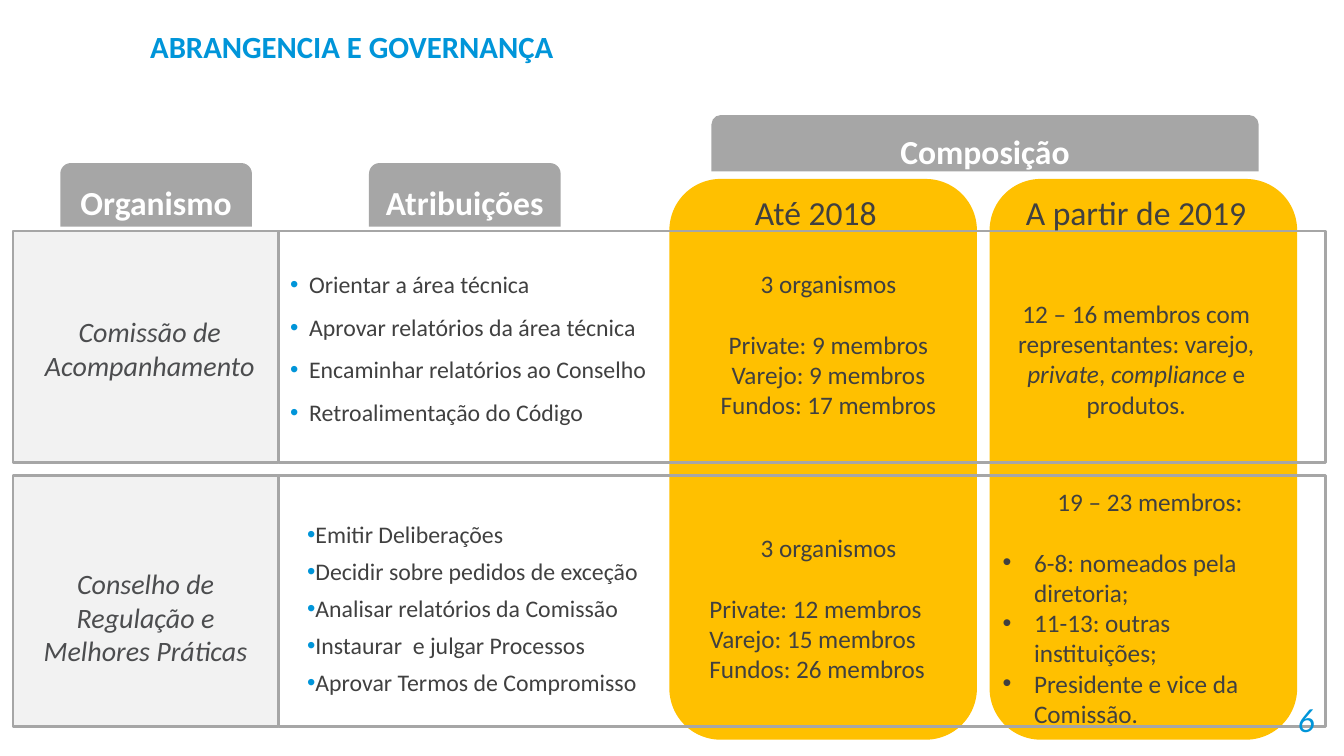
from lxml import etree
from pptx import Presentation
from pptx.dml.color import RGBColor
from pptx.enum.shapes import MSO_SHAPE
from pptx.enum.text import MSO_ANCHOR, PP_ALIGN
from pptx.oxml.ns import qn
from pptx.util import Cm, Pt

LEFT, CENTER, RIGHT = PP_ALIGN.LEFT, PP_ALIGN.CENTER, PP_ALIGN.RIGHT
TOP, MIDDLE = MSO_ANCHOR.TOP, MSO_ANCHOR.MIDDLE
RECTANGLE, ROUNDED = MSO_SHAPE.RECTANGLE, MSO_SHAPE.ROUNDED_RECTANGLE
TAB = MSO_SHAPE.ROUND_2_SAME_RECTANGLE

FONT = "Calibri"
BLUE, GRAY, PALE, YELLOW = "0095D9", "A6A6A6", "F2F2F2", "FFC000"
DARK, SLATE, WHITE = "404040", "4C4D4F", "FFFFFF"

TITLE = "ABRANGENCIA E GOVERNANÇA"
PAGE_NUMBER = "6"
TABS = [
    ("Organismo", (1.52, 4.11, 4.83, 1.6)),
    ("Atribuições", (9.3, 4.11, 4.83, 1.6)),
    ("Composição", (17.93, 2.9, 13.79, 1.42)),
]
PERIODS = ["Até 2018", "A partir de 2019"]
PERIOD_LEFT, PERIOD_STEP, PERIOD_WIDTH = 16.87, 8.07, 7.75
ROWS = [(5.82, 5.84), (11.99, 6.32)]
ROW_LEFT, NAME_WIDTH, DETAIL_WIDTH = 0.33, 6.68, 26.39

BULLET_HANGING = dict(size=17, after=10, bullet=BLUE, margin=0.48, indent=-0.48)
BULLET_INDENTED = dict(size=17, after=6, bullet=BLUE, margin=0.48, indent=0.48)
BULLET_DARK = dict(bullet=DARK, margin=0.79, indent=-0.79)
NAME = dict(size=20, color=SLATE, italic=True, align=CENTER)
LEAD = dict(align=CENTER, after=22)
CENTERED = dict(align=CENTER)

TEXTS = [
    ((0.74, 7.8, 6.07, 1.96), [(["Comissão de Acompanhamento"], NAME)]),
    ((0.33, 14.15, 6.68, 2.82),
     [(["Conselho de Regulação e Melhores Práticas"], NAME)]),
    ((7.06, 6.68, 9.91, 4.24), [([
        "Orientar a área técnica",
        "Aprovar relatórios da área técnica",
        "Encaminhar relatórios ao Conselho",
        "Retroalimentação do Código",
    ], BULLET_HANGING)]),
    ((6.53, 12.98, 13.03, 4.75), [([
        "Emitir Deliberações",
        "Decidir sobre pedidos de exceção",
        "Analisar relatórios da Comissão",
        "Instaurar  e julgar Processos",
        "Aprovar Termos de Compromisso",
    ], BULLET_INDENTED)]),
    ((17.63, 6.63, 6.5, 4.11), [
        (["3 organismos"], LEAD),
        (["Private: 9 membros", "Varejo: 9 membros", "Fundos: 17 membros"], CENTERED),
    ]),
    ((17.63, 13.28, 6.5, 4.11), [
        (["3 organismos"], LEAD),
        (["Private: 12 membros", "Varejo: 15 membros", "Fundos: 26 membros"], {}),
    ]),
    ((24.94, 7.39, 7.39, 3.35), [([
        "12 – 16 membros com representantes: varejo, *private*, *compliance* e produtos.",
    ], CENTERED)]),
    ((25.02, 12.12, 7.92, 6.4), [
        (["19 – 23 membros:"], LEAD),
        (["6-8: nomeados pela diretoria;", "11-13: outras instituições;",
          "Presidente e vice da Comissão."], BULLET_DARK),
    ]),
]


def rgb(value):
    return RGBColor.from_string(value)


def add_bullet(para, color, margin, indent):
    properties = para._p.get_or_add_pPr()
    properties.set("marL", str(Cm(margin)))
    properties.set("indent", str(Cm(indent)))
    tint = etree.SubElement(properties, qn("a:buClr"))
    etree.SubElement(tint, qn("a:srgbClr"), val=color)
    etree.SubElement(properties, qn("a:buFont"), typeface="Arial")
    etree.SubElement(properties, qn("a:buChar"), char="•")


def write(box, lines, size=18, color=DARK, bold=False, italic=False, align=LEFT,
          after=0, anchor=TOP, bullet=None, margin=0, indent=0):
    frame = box.text_frame
    frame.word_wrap = True
    frame.vertical_anchor = anchor
    for line in lines:
        para = frame.paragraphs[-1]
        if para.runs:
            para = frame.add_paragraph()
        if bullet:
            add_bullet(para, bullet, margin, indent)
        para.alignment = align
        para.space_before = Pt(0)
        para.space_after = Pt(after)
        for position, words in enumerate(line.split("*")):
            span = para.add_run()
            span.text = words
            font = span.font
            font.name, font.size, font.bold = FONT, Pt(size), bold
            font.italic = italic or position % 2 == 1
            font.color.rgb = rgb(color)


def add_box(page, area):
    return page.shapes.add_textbox(*map(Cm, area))


def add_panel(page, kind, area, fill=None, line=None):
    panel = page.shapes.add_shape(kind, *map(Cm, area))
    panel.shadow.inherit = False
    if fill:
        panel.fill.solid()
        panel.fill.fore_color.rgb = rgb(fill)
    else:
        panel.fill.background()
    if line:
        panel.line.color.rgb = rgb(line)
        panel.line.width = Pt(2)
    else:
        panel.line.fill.background()
    return panel


def main():
    deck = Presentation()
    deck.slide_width, deck.slide_height = Cm(33.87), Cm(19.05)
    page = deck.slides.add_slide(deck.slide_layouts[5])

    title = page.shapes.title
    title.left, title.top, title.width, title.height = map(Cm, (3.53, 0.41, 19.41, 1.52))
    write(title, [TITLE], size=22, color=BLUE, bold=True, anchor=MIDDLE)

    for label, area in TABS:
        tab = add_panel(page, TAB, area, GRAY)
        tab.text_frame.margin_top = Cm(0.3)
        tab.text_frame.margin_bottom = Cm(0)
        write(tab, [label], size=24, color=WHITE, bold=True, align=CENTER, anchor=MIDDLE)

    for index in range(len(PERIODS)):
        left = PERIOD_LEFT + index * PERIOD_STEP
        add_panel(page, ROUNDED, (left, 4.51, PERIOD_WIDTH, 14.13), YELLOW)

    for top, height in ROWS:
        detail_left = ROW_LEFT + NAME_WIDTH
        add_panel(page, RECTANGLE, (detail_left, top, DETAIL_WIDTH, height), line=GRAY)
        add_panel(page, RECTANGLE, (ROW_LEFT, top, NAME_WIDTH, height), PALE, GRAY)

    for index, period in enumerate(PERIODS):
        heading = add_box(page, (17.5 + index * PERIOD_STEP, 4.7, 6.12, 1.27))
        write(heading, [period], size=24, align=CENTER)

    for area, blocks in TEXTS:
        box = add_box(page, area)
        for lines, style in blocks:
            write(box, lines, **style)

    number = add_box(page, (24.87, 17.6, 8.51, 1.02))
    write(number, [PAGE_NUMBER], size=24, color=BLUE, italic=True, align=RIGHT, anchor=MIDDLE)

    deck.save("out.pptx")


if __name__ == "__main__":
    main()
